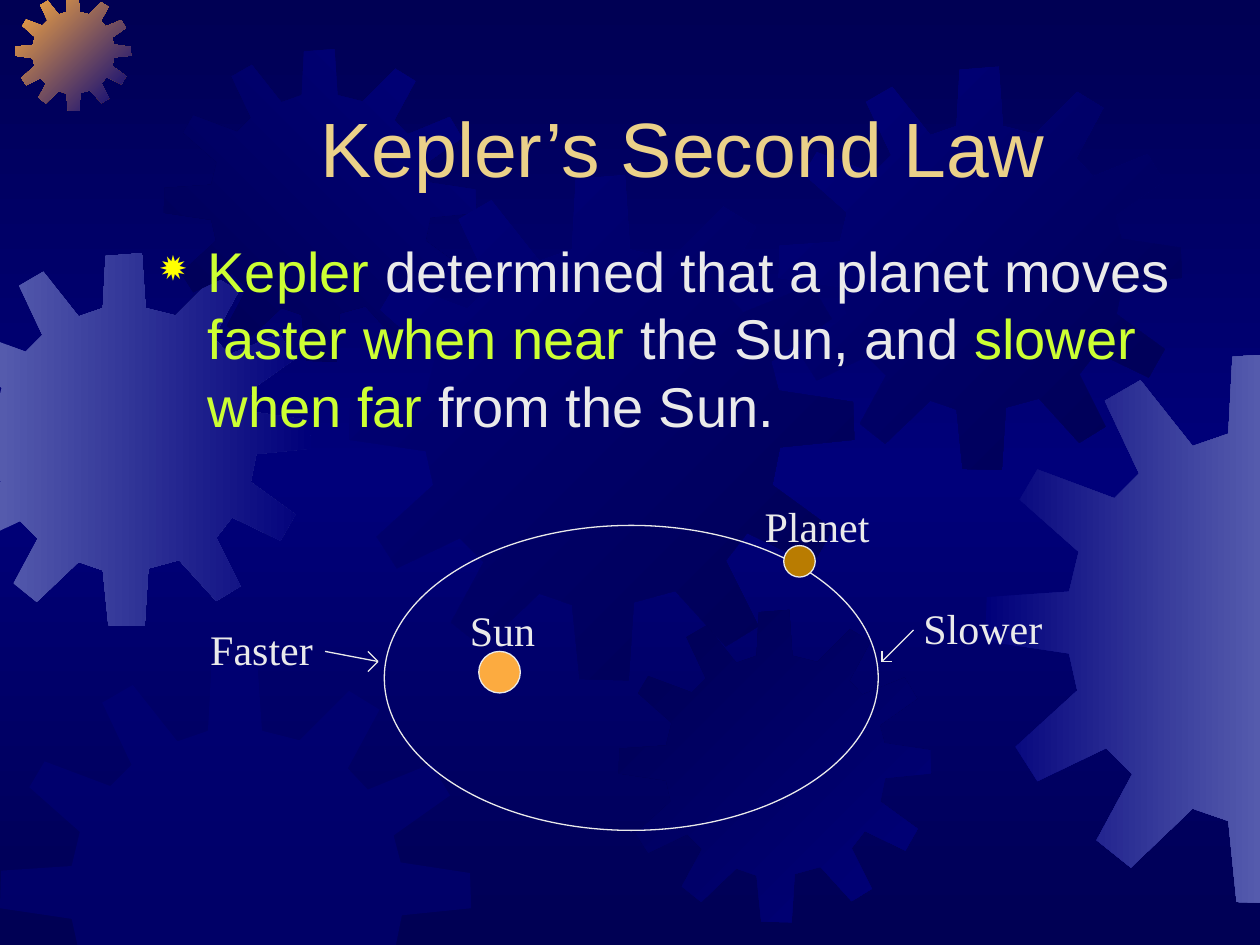
import copy
from typing import NamedTuple, Optional

import pptx
import pptx.dml.color
import pptx.enum.shapes
import pptx.enum.text
import pptx.oxml
import pptx.oxml.ns
import pptx.util
from pptx.util import Inches

NAVY, BLUE, STEEL, ORANGE = "000054", "00007A", "555BAD", "FCAB40"
PALE, LIME, GOLD, BRONZE = "EAEAEA", "CCFF33", "EBD189", "B97C01"
WIDTH, HEIGHT = 10, 7.5

GEAR_UNITS = 401
GEAR_OUTLINE = [
    (255, 67), (223, 59), (219, 0), (180, 3), (177, 59), (151, 68), (113, 20), (87, 35),
    (112, 88), (94, 106), (38, 85), (25, 107), (68, 145), (61, 174), (1, 178), (0, 210),
    (61, 219), (67, 246), (22, 287), (38, 312), (88, 288), (107, 307), (81, 355), (106, 375),
    (151, 332), (177, 341), (183, 400), (222, 401), (226, 339), (259, 330), (299, 374), (325, 358),
    (299, 306), (316, 284), (368, 309), (384, 281), (336, 246), (342, 216), (401, 210), (400, 180),
    (341, 171), (335, 148), (383, 114), (367, 87), (313, 109), (296, 91), (323, 41), (297, 25),
]


class Gear(NamedTuple):
    left: float
    top: float
    size: float
    start: str
    end: Optional[str] = None
    angle: float = 0


class Disc(NamedTuple):
    left: float
    top: float
    width: float
    height: float
    fill: Optional[str] = None


class Label(NamedTuple):
    text: str
    left: float
    top: float
    width: float


class Span(NamedTuple):
    text: str
    color: str


GEARS = [
    Gear(-0.49, 2.01, 2.96, STEEL, BLUE),
    Gear(0.12, -0.04, 0.92, ORANGE, BLUE, 45),
    Gear(1.3, 0.39, 2.48, NAVY, BLUE, 315),
    Gear(2.77, 1.39, 4.01, BLUE, NAVY, 45),
    Gear(0, 5.25, 3.74, BLUE),
    Gear(4.91, 4.84, 2.48, NAVY, BLUE, 45),
    Gear(6.18, 0.53, 3.2, BLUE, NAVY, 45),
    Gear(7.82, 2.8, 4.37, BLUE, STEEL),
]
ORBIT_SUN_PLANET = [
    Disc(3.05, 4.17, 3.92, 2.42),
    Disc(3.8, 5.17, 0.33, 0.33, ORANGE),
    Disc(6.22, 4.33, 0.25, 0.25, BRONZE),
]
LABELS = [
    Label("Sun", 3.63, 4.75, 0.72),
    Label("Planet", 5.97, 3.92, 1.03),
    Label("Faster", 1.57, 4.9, 1.02),
    Label("Slower", 7.23, 4.73, 1.15),
]
# Each arrow: its tip, then the far ends of its shaft and two barbs.
ARROWS = [
    ((3, 5.25), [(2.58, 5.17), (2.92, 5.17), (2.92, 5.33)]),
    ((7, 5.25), [(7.25, 5), (7.08, 5.25), (7, 5.17)]),
]
LAW = [
    Span("Kepler", LIME), Span(" determined that a planet moves ", PALE),
    Span("faster when near", LIME), Span(" the Sun, and ", PALE),
    Span("slower when far", LIME), Span(" from the Sun.", PALE),
]


def rgb(value: str) -> pptx.dml.color.RGBColor:
    return pptx.dml.color.RGBColor.from_string(value)


def set_gradient(fill, start: str, end: str, angle: float) -> None:
    """Fill from start to end, with the angle measured clockwise."""
    fill.gradient()
    fill.gradient_angle = 360 - angle
    for stop, color, position in zip(fill.gradient_stops, (start, end), (0, 1)):
        stop.color.rgb = rgb(color)
        stop.position = position


def paint_background(page) -> None:
    set_gradient(page.background.fill, NAVY, BLUE, 90)
    stops = page.element.find(".//" + pptx.oxml.ns.qn("a:gsLst"))
    stops[1].set("pos", "50000")
    last = copy.deepcopy(stops[0])
    last.set("pos", "100000")
    stops.append(last)


def clip(points: list, axis: int, limit: float, sign: int) -> list:
    """Keep the part of a polygon where sign * coordinate <= sign * limit."""
    kept = []
    for before, after in zip(points[-1:] + points[:-1], points):
        inside = [sign * point[axis] <= sign * limit for point in (before, after)]
        if inside[0] != inside[1]:
            share = (limit - before[axis]) / (after[axis] - before[axis])
            kept.append(tuple(b + share * (a - b) for b, a in zip(before, after)))
        if inside[1]:
            kept.append(after)
    return kept


def add_gear(page, gear: Gear) -> None:
    scale = gear.size / GEAR_UNITS
    points = [(gear.left + x * scale, gear.top + y * scale) for x, y in GEAR_OUTLINE]
    for axis, limit, sign in ((0, 0, -1), (0, WIDTH, 1), (1, 0, -1), (1, HEIGHT, 1)):
        points = clip(points, axis, limit, sign)
    corners = [(Inches(x), Inches(y)) for x, y in points]
    builder = page.shapes.build_freeform(*corners[0])
    builder.add_line_segments(corners[1:], close=True)
    shape = builder.convert_to_shape()
    shape.shadow.inherit = False
    shape.line.fill.background()
    if gear.end:
        set_gradient(shape.fill, gear.start, gear.end, gear.angle)
    else:
        shape.fill.solid()
        shape.fill.fore_color.rgb = rgb(gear.start)
        color = shape.element.find(".//" + pptx.oxml.ns.qn("a:srgbClr"))
        pptx.oxml.ns.qn("a:alpha")
        color.append(pptx.oxml.parse_xml(
            f'<a:alpha {pptx.oxml.ns.nsdecls("a")} val="50000"/>'))


def set_line(line) -> None:
    line.color.rgb = rgb(PALE)
    line.width = pptx.util.Pt(0.75)


def add_disc(page, disc: Disc) -> None:
    place = [Inches(value) for value in disc[:4]]
    shape = page.shapes.add_shape(pptx.enum.shapes.MSO_SHAPE.OVAL, *place)
    shape.shadow.inherit = False
    set_line(shape.line)
    if disc.fill:
        shape.fill.solid()
        shape.fill.fore_color.rgb = rgb(disc.fill)
    else:
        shape.fill.background()


def add_stroke(page, start: tuple, end: tuple) -> None:
    ends = [Inches(value) for value in (*start, *end)]
    stroke = page.shapes.add_connector(pptx.enum.shapes.MSO_CONNECTOR.STRAIGHT, *ends)
    set_line(stroke.line)
    stroke.element.spPr.append(
        pptx.oxml.parse_xml(f'<a:effectLst {pptx.oxml.ns.nsdecls("a")}/>'))


def add_bullet(para) -> None:
    properties = para._p.get_or_add_pPr()
    indent = Inches(0.38)
    properties.set("marL", str(indent))
    properties.set("indent", str(-indent))
    space = pptx.oxml.ns.nsdecls("a")
    for xml in (f'<a:buClr {space}><a:srgbClr val="FFFF00"/></a:buClr>',
                f'<a:buSzPct {space} val="80000"/>',
                f'<a:buChar {space} char="✹"/>'):
        properties.append(pptx.oxml.parse_xml(xml))


def add_text(page, spans: list, place: tuple, *, size: float, font: str, wrap: bool = True,
             centred: bool = False, bottom: bool = False, bullet: bool = False):
    box = page.shapes.add_textbox(*[Inches(value) for value in place])
    frame = box.text_frame
    frame.word_wrap = wrap
    if bottom:
        frame.vertical_anchor = pptx.enum.text.MSO_ANCHOR.BOTTOM
    para = frame.paragraphs[0]
    if bullet:
        add_bullet(para)
    if centred:
        para.alignment = pptx.enum.text.PP_ALIGN.CENTER
    for span in spans:
        run = para.add_run()
        run.text = span.text
        run.font.size = pptx.util.Pt(size)
        run.font.name = font
        run.font.color.rgb = rgb(span.color)
    return box


def main() -> None:
    deck = pptx.Presentation()
    deck.slide_width, deck.slide_height = Inches(WIDTH), Inches(HEIGHT)
    page = deck.slides.add_slide(deck.slide_layouts[6])
    paint_background(page)
    for gear in GEARS:
        add_gear(page, gear)
    add_text(page, [Span("Kepler’s Second Law", GOLD)], (1.17, 0.33, 8.5, 1.25),
             size=44, font="Arial", centred=True, bottom=True)
    add_text(page, LAW, (1.17, 1.83, 8.5, 4.5), size=32, font="Arial", bullet=True)
    for disc in ORBIT_SUN_PLANET:
        add_disc(page, disc)
    for label in LABELS:
        add_text(page, [Span(label.text, PALE)], (label.left, label.top, label.width, 0.5),
                 size=24, font="Times New Roman", wrap=False)
    for tip, ends in ARROWS:
        for end in ends:
            add_stroke(page, end, tip)
    deck.save("out.pptx")


if __name__ == "__main__":
    main()
